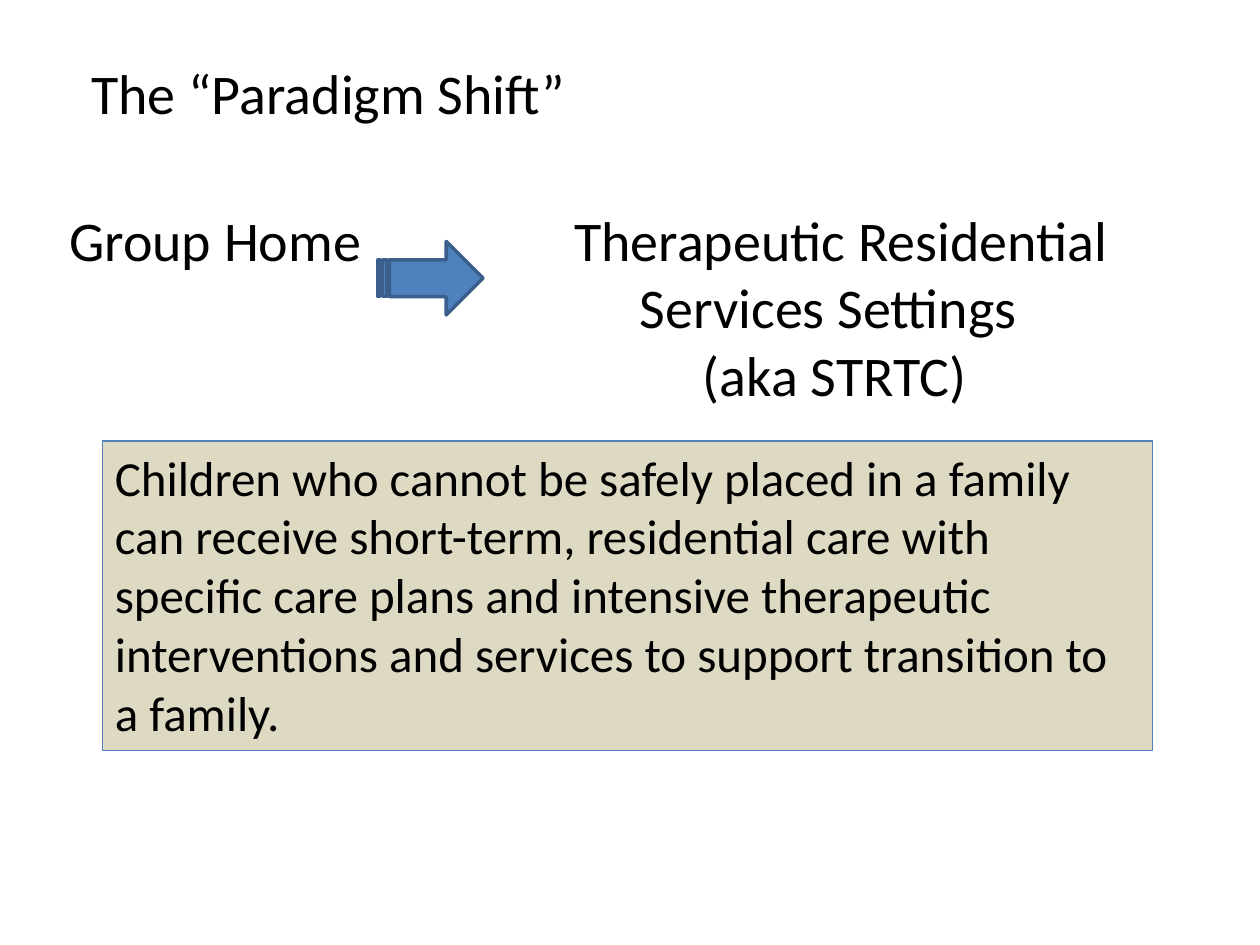
from pptx import Presentation
from pptx import util as u
from pptx.dml.color import RGBColor
from pptx.enum import shapes, text

BLACK = RGBColor(0x00, 0x00, 0x00)
BLUE = RGBColor(0x4F, 0x81, 0xBD)
NAVY = RGBColor(0x3A, 0x5F, 0x8C)
TAN = RGBColor(0xDD, 0xD9, 0xC3)
LEFT, MID = text.PP_ALIGN.LEFT, text.PP_ALIGN.CENTER


class Page:
    """Hold the text style and the current slide, and add elements to it."""

    def __init__(self, slide):
        self.slide = slide
        self.font = {"name": "Calibri", "size": u.Pt(32)}
        self.frame = {"word_wrap": True, "vertical_anchor": text.MSO_ANCHOR.TOP}

    def letter(self, shape, lines, align, **style):
        frame = shape.text_frame
        frame.text = "\n".join(lines)
        for key, val in self.frame.items():
            setattr(frame, key, val)
        for para in frame.paragraphs:
            para.alignment = align
            for key, val in {**self.font, **style}.items():
                setattr(para.font, key, val)
            para.font.color.rgb = BLACK

    def label(self, box, lines, align=LEFT):
        shape = self.slide.shapes.add_textbox(*map(u.Pt, box))
        self.letter(shape, lines, align)

    def block(self, kind, box, fill, edge, width):
        shape = self.slide.shapes.add_shape(kind, *map(u.Pt, box))
        shape.shadow.inherit = False
        shape.fill.solid()
        shape.fill.fore_color.rgb = fill
        shape.line.color.rgb = edge
        shape.line.width = u.Pt(width)
        return shape

    def arrow(self, box):
        self.block(shapes.MSO_SHAPE.STRIPED_RIGHT_ARROW, box, BLUE, NAVY, 2)

    def panel(self, box, lines):
        shape = self.block(shapes.MSO_SHAPE.RECTANGLE, box, TAN, BLUE, 0.75)
        self.letter(shape, lines, LEFT, size=u.Pt(28))


def main():
    deck = Presentation()
    deck.slide_width, deck.slide_height = u.Pt(720), u.Pt(540)
    page = Page(deck.slides.add_slide(deck.slide_layouts[6]))
    page.label((24, 114, 198, 90), ["Group Home"], MID)
    page.label(
        (288, 114, 378, 152.64),
        [" Therapeutic Residential Services Settings ", "(aka STRTC)"],
        MID,
    )
    page.arrow((216, 138, 60, 42))
    page.label((45, 30, 342, 46), ["The “Paradigm Shift”"])
    page.panel(
        (58.5, 252, 600, 177),
        [
            "Children who cannot be safely placed in a family can receive "
            "short-term, residential care with specific care plans and "
            "intensive therapeutic interventions and services to support "
            "transition to a family."
        ],
    )
    deck.save("out.pptx")


if __name__ == "__main__":
    main()
